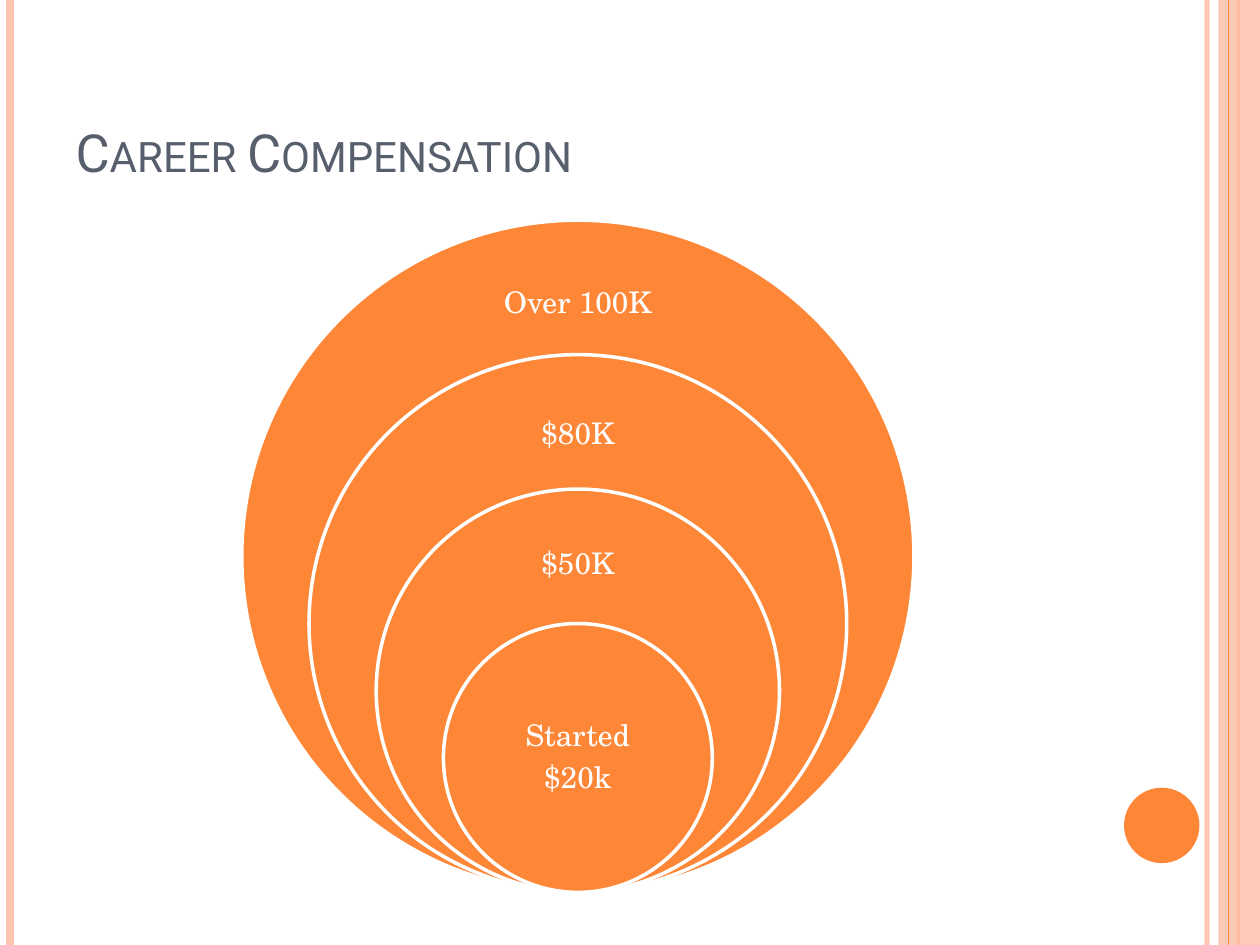
"""Builds the career compensation slide with nested circles."""
from lxml import etree
from pptx import Presentation, util as u
from pptx.dml.color import RGBColor
from pptx.enum import shapes, text
from pptx.oxml import ns

ORANGE, PEACH, SLATE, WHITE = "FE8637", "FEC3AE", "575F6D", "FFFFFF"
WIDTH, HEIGHT = 25.4, 19.05


def color(value):
    return RGBColor.from_string(value)


class Deck:
    title_font, body_font = "Roboto", "TeX Gyre Schola"
    title_size, body_size = 30, 17

    def __init__(self):
        self.prs = Presentation()
        self.prs.slide_width, self.prs.slide_height = u.Cm(WIDTH), u.Cm(HEIGHT)
        self.s = self.prs.slides.add_slide(self.prs.slide_layouts[5])

    def opacity(self, sp, percent):
        for clr in sp._element.spPr.iter(ns.qn("a:srgbClr")):
            etree.SubElement(clr, ns.qn("a:alpha")).set("val", str(percent * 1000))

    def stripe(self, x, weight, line, opacity=100):
        sp = self.s.shapes.add_connector(
            shapes.MSO_CONNECTOR.STRAIGHT, u.Cm(x), 0, u.Cm(x), u.Cm(HEIGHT))
        sp.line.width = u.Pt(weight)
        sp.line.color.rgb = color(line)
        etree.SubElement(sp._element.spPr, ns.qn("a:effectLst"))
        if opacity < 100:
            self.opacity(sp, opacity)

    def shape(self, kind, x, y, w, h, fill, line=None, opacity=100):
        sp = self.s.shapes.add_shape(kind, u.Cm(x), u.Cm(y), u.Cm(w), u.Cm(h))
        sp.shadow.inherit = False
        sp.fill.solid()
        sp.fill.fore_color.rgb = color(fill)
        if line:
            sp.line.color.rgb = color(line)
            sp.line.width = u.Pt(2)
        else:
            sp.line.fill.background()
        if opacity < 100:
            self.opacity(sp, opacity)

    def circle(self, x, y, size, line=None):
        self.shape(shapes.MSO_SHAPE.OVAL, x, y, size, size, ORANGE, line)

    def format(self, p, name, size, fill):
        p.font.name, p.font.size = name, u.Pt(size)
        p.font.color.rgb = color(fill)

    def title(self, words):
        sp = self.s.shapes.title
        sp.left, sp.top, sp.width, sp.height = u.Cm(1.27), u.Cm(0.43), u.Cm(22.86), u.Cm(3.38)
        tf = sp.text_frame
        tf.vertical_anchor = text.MSO_ANCHOR.BOTTOM
        p = tf.paragraphs[0]
        p.alignment = text.PP_ALIGN.LEFT
        r = p.add_run()
        r.text = words
        r._r.get_or_add_rPr().set("cap", "small")
        self.format(p, self.title_font, self.title_size, SLATE)

    def label(self, x, y, w, h, lines):
        tf = self.s.shapes.add_textbox(u.Cm(x), u.Cm(y), u.Cm(w), u.Cm(h)).text_frame
        tf.word_wrap = True
        tf.vertical_anchor = text.MSO_ANCHOR.MIDDLE
        tf.margin_left = tf.margin_right = tf.margin_top = tf.margin_bottom = u.Cm(0.33)
        tf.text = "\n".join(lines)
        for p in tf.paragraphs:
            p.alignment = text.PP_ALIGN.CENTER
            p.line_spacing, p.space_after = 0.9, u.Pt(6)
            self.format(p, self.body_font, self.body_size, WHITE)


def main():
    deck = Deck()
    deck.stripe(24.33, 3, PEACH, 93)
    deck.stripe(0.2, 4.5, PEACH)
    deck.stripe(24.97, 1.5, ORANGE)
    deck.shape(shapes.MSO_SHAPE.RECTANGLE, 24.56, 0, 0.84, HEIGHT, PEACH, opacity=87)
    deck.stripe(24.77, 0.75, ORANGE)
    deck.circle(22.66, 15.88, 1.52)
    deck.title("Career Compensation")

    center, bottom, largest, label_width = 11.65, 17.99, 13.55, 3.8
    rings = [
        (["Over 100K"], 0.05, 0.15),
        (["$80K"], 0.06, 0.18),
        (["$50K"], 0.075, 0.225),
        (["Started", "$20k"], 0.25, 0.5),
    ]
    for i, (lines, offset, height) in enumerate(rings):
        size = largest * (5 - i) / 5
        top = bottom - size
        deck.circle(center - size / 2, top, size, WHITE)
        deck.label(center - label_width / 2, top + offset * size,
                   label_width, height * size, lines)
    deck.prs.save("out.pptx")


if __name__ == "__main__":
    main()
